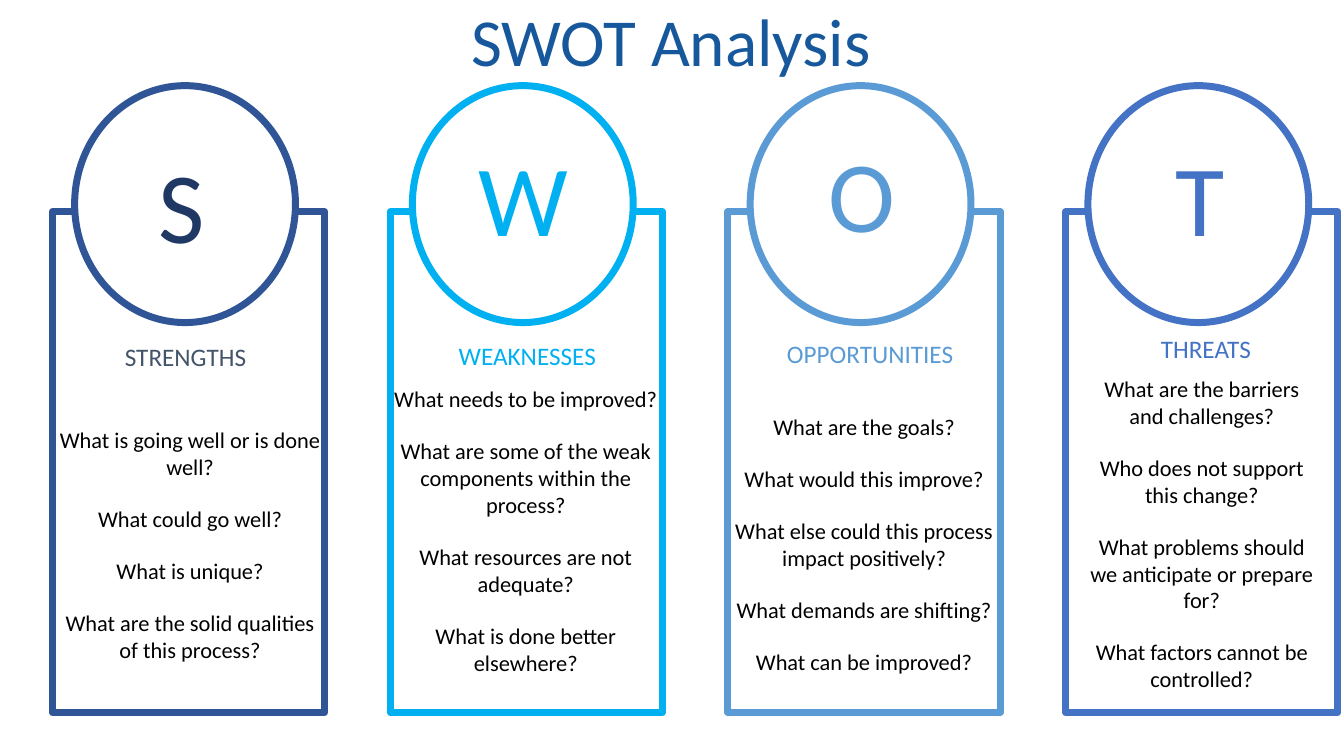
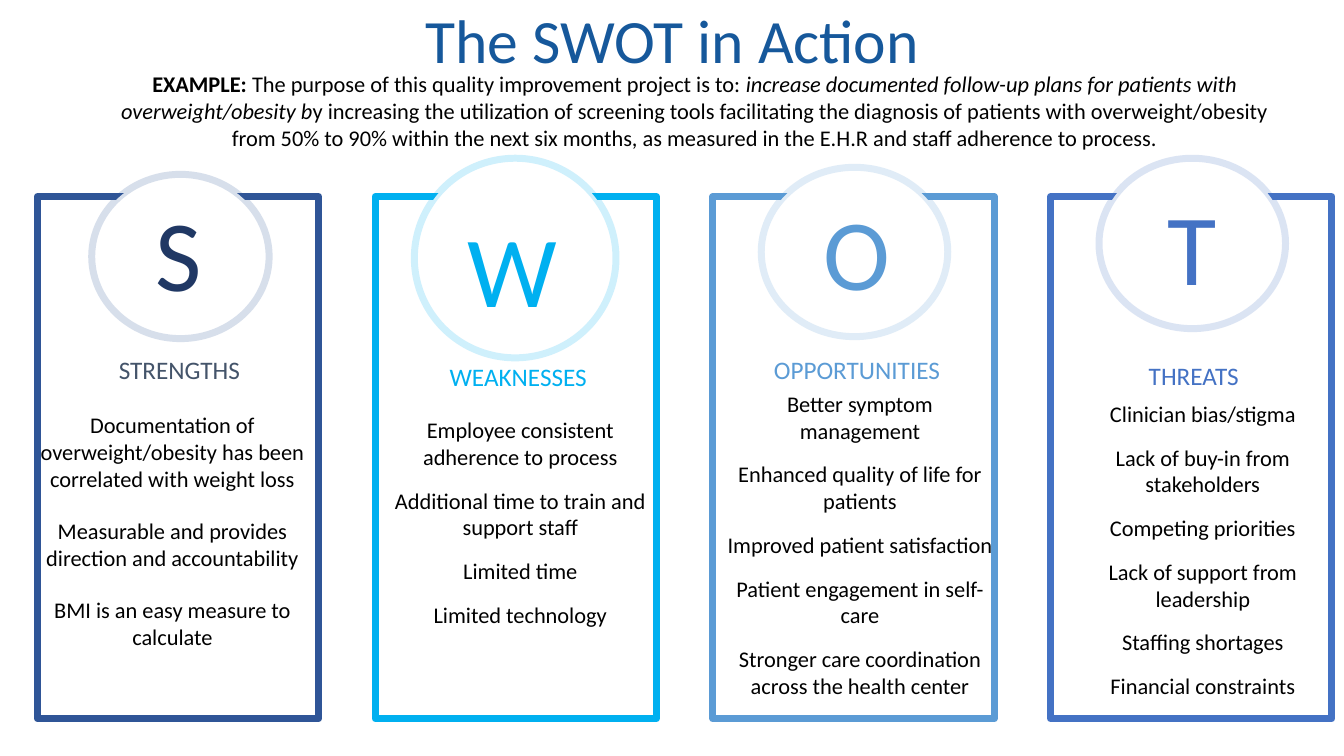
from lxml.etree import SubElement
from pptx import Presentation
from pptx.dml.color import RGBColor
from pptx.enum.shapes import MSO_SHAPE
from pptx.enum.text import MSO_ANCHOR, MSO_AUTO_SIZE, PP_ALIGN
from pptx.oxml.ns import qn
from pptx.util import Inches, Pt

# Shared look
FONT = "Calibri"
COLORS = {
    "title": "16589B", "text": "000000", "white": "FFFFFF",
    "navy": "2F5597", "dark": "203864", "slate": "44546A",
    "cyan": "00B0F0", "sky": "5B9BD5", "blue": "4472C4",
}
PITCH = 3.35          # distance from one column to the next
LETTER_SIZE = (1.76, 1.31)
HEADING_SIZE = (2.64, 0.4)

# Letter, heading, then the colours of outline, letter and heading
COLUMNS = [
    ("S", "STRENGTHS", "navy", "dark", "slate"),
    ("W", "WEAKNESSES", "cyan", "cyan", "cyan"),
    ("O", "OPPORTUNITIES", "sky", "sky", "sky"),
    ("T", "THREATS", "blue", "blue", "blue"),
]

# Boxes are (left from the column's edge, top, width, height);
# letters and headings have a fixed size, so only (left, top)
QUESTIONS = {
    "panel": (0.52, 2.1, 2.7, 4.97),
    "circles": [(0.22, 0.85, 2.19, 2.35)] * 4,
    "letters": [(0.4, 1.36), (0.44, 1.29), (0.45, 1.25), (0.45, 1.29)],
    "headings": [(0, 3.34), (0.04, 3.33), (0.09, 3.31), (0.07, 3.26)],
    "bodies": [(-0.04, 4.18, 2.81, 2.47), (-0.06, 3.77, 2.81, 3.28),
               (-0.21, 4.05, 3.12, 2.73), (0.13, 3.67, 2.44, 3.28)],
    "gaps": [18, 18, 18, 18],
    "texts": [
        ["What is going well or is done well?", "What could go well?",
         "What is unique?", "What are the solid qualities of this process?"],
        ["What needs to be improved?",
         "What are some of the weak components within the process?",
         "What resources are not adequate?", "What is done better elsewhere?"],
        ["What are the goals?", "What would this improve?",
         "What else could this process impact positively?",
         "What demands are shifting?", "What can be improved?"],
        ["What are the barriers and challenges?",
         "Who does not support this change?",
         "What problems should we anticipate or prepare for?",
         "What factors cannot be controlled?"],
    ],
}
ACTION = {
    "panel": (0.37, 1.95, 2.79, 5.18),
    "circles": [(0.54, 1.73, 1.76, 1.63), (0.39, 1.57, 2, 1.98),
                (0.48, 1.66, 1.85, 1.68), (0.48, 1.57, 1.85, 1.69)],
    "letters": [(0.52, 1.84), (0.48, 2), (0.55, 1.83), (0.52, 1.78)],
    "headings": [(0.09, 3.47), (0.1, 3.54), (0.11, 3.47), (0.1, 3.53)],
    "bodies": [(-0.22, 4.03, 3.12, 2.49), (0, 4.08, 2.88, 2.22),
               (0.04, 3.82, 2.84, 3.2), (0.29, 3.92, 2.44, 3.1)],
    "gaps": [18, 12, 12, 12],
    "texts": [
        ["Documentation of overweight/obesity has been correlated with weight loss",
         "Measurable and provides direction and accountability",
         "BMI is an easy measure to calculate"],
        ["Employee consistent adherence to process",
         "Additional time to train and support staff",
         "Limited time", "Limited technology"],
        ["Better symptom management", "Enhanced quality of life for patients",
         "Improved patient satisfaction", "Patient engagement in self-care",
         "Stronger care coordination across the health center"],
        ["Clinician bias/stigma", "Lack of buy-in from stakeholders",
         "Competing priorities", "Lack of support from leadership",
         "Staffing shortages", "Financial constraints"],
    ],
}
EXAMPLE = [
    ("EXAMPLE: ", "bold"),
    ("The purpose of this quality improvement project is to: ", ""),
    ("increase documented follow-up plans for patients with "
     "overweight/obesity b", "italic"),
    ("y increasing the utilization of screening tools facilitating the "
     "diagnosis of patients with overweight/obesity from 50% to 90% within "
     "the next six months, as measured in the E.H.R and staff adherence to "
     "process.", ""),
]


def rgb(name):
    return RGBColor.from_string(COLORS[name])


def inches(box):
    return [Inches(v) for v in box]


def write(s, paragraphs, size=16, color="text", gap=0, anchor=MSO_ANCHOR.TOP):
    """Fill a shape with centred paragraphs: strings or lists of (text, style)."""
    tf = s.text_frame
    tf.word_wrap = True
    tf.auto_size = MSO_AUTO_SIZE.NONE
    tf.vertical_anchor = anchor
    for i, runs in enumerate(paragraphs):
        p = tf.add_paragraph() if i else tf.paragraphs[0]
        p.alignment = PP_ALIGN.CENTER
        p.space_after = Pt(gap)
        for text, style in [(runs, "")] if isinstance(runs, str) else runs:
            r = p.add_run()
            r.text = text
            r.font.name, r.font.size = FONT, Pt(size)
            r.font.color.rgb = rgb(color)
            r.font.bold = style == "bold"
            r.font.italic = style == "italic"


def add_text(slide, box, paragraphs, **fmt):
    s = slide.shapes.add_textbox(*inches(box))
    write(s, paragraphs, **fmt)


def add_outline(slide, kind, box, color, fill=None, opacity=100):
    s = slide.shapes.add_shape(kind, *inches(box))
    s.shadow.inherit = False
    if fill:
        s.fill.solid()
        s.fill.fore_color.rgb = rgb(fill)
    else:
        s.fill.background()
    s.line.width = Pt(5)
    s.line.color.rgb = rgb(color)
    if opacity < 100:
        clr = s.element.xpath(".//a:ln//a:srgbClr")[0]
        SubElement(clr, qn("a:alpha"), val=str(opacity * 1000))


def add_title(prs, text, box, size):
    slide = prs.slides.add_slide(prs.slide_layouts[5])
    s = slide.shapes.title
    s.left, s.top, s.width, s.height = inches(box)
    write(s, [text], size=size, color="title")
    return slide


def add_columns(slide, plan, ring_opacity=100):
    left, top, width, height = plan["panel"]
    for i, (letter, heading, line, letter_color, heading_color) in enumerate(COLUMNS):
        x = left + i * PITCH

        def place(box, size=()):
            return (x + box[0], *box[1:], *size)

        # Panel, circle and letter
        add_outline(slide, MSO_SHAPE.RECTANGLE, (x, top, width, height), line)
        add_outline(slide, MSO_SHAPE.OVAL, place(plan["circles"][i]), line,
                    fill="white", opacity=ring_opacity)
        add_text(slide, place(plan["letters"][i], LETTER_SIZE), [letter],
                 size=72, color=letter_color, anchor=MSO_ANCHOR.MIDDLE)
        # Heading and points
        add_text(slide, place(plan["headings"][i], HEADING_SIZE), [heading],
                 size=18, color=heading_color)
        add_text(slide, place(plan["bodies"][i]), plan["texts"][i],
                 gap=plan["gaps"][i])


def main():
    prs = Presentation()
    prs.slide_width, prs.slide_height = Inches(13.33), Inches(7.5)

    # Questions to ask
    slide = add_title(prs, "SWOT Analysis", (0.12, -0.06, 13.07, 0.91), 48)
    add_columns(slide, QUESTIONS)

    # Worked example
    slide = add_title(prs, "The SWOT in Action", (2.79, -0.03, 7.76, 0.84), 44)
    add_columns(slide, ACTION, ring_opacity=18)
    add_text(slide, (0.89, 0.65, 12, 0.91), [EXAMPLE], gap=6)

    prs.save("out.pptx")


if __name__ == "__main__":
    main()
